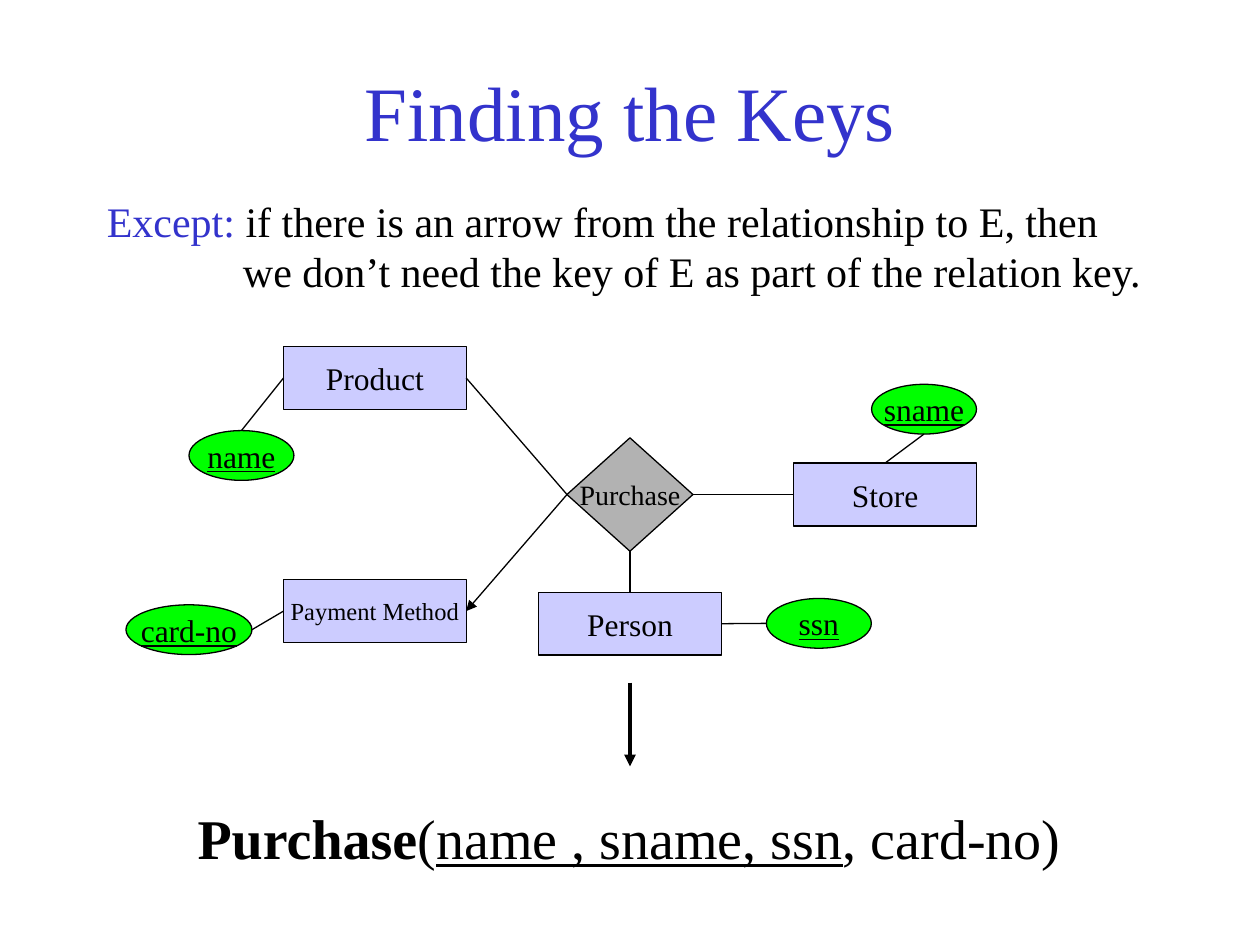
from lxml.etree import SubElement
from pptx import Presentation
from pptx.dml.color import RGBColor
from pptx.enum.shapes import MSO_CONNECTOR, MSO_SHAPE
from pptx.enum.text import MSO_ANCHOR, PP_ALIGN
from pptx.oxml.ns import qn
from pptx.util import Inches, Pt

FONT = "Times New Roman"
BLUE = RGBColor(0x33, 0x33, 0xCC)
BLACK = RGBColor(0, 0, 0)
GRAY = RGBColor(0xB2, 0xB2, 0xB2)
LILAC = RGBColor(0xCC, 0xCC, 0xFF)
GREEN = RGBColor(0, 0xFF, 0)
TOP, LEFT, BOTTOM, RIGHT = range(4)

deck = Presentation()
deck.slide_width, deck.slide_height = Inches(10), Inches(7.5)
COL = deck.slide_width / 40
ROW = deck.slide_height / 30
slide = deck.slides.add_slide(deck.slide_layouts[5])
shapes = slide.shapes


def add_run(para, text, size, color=BLACK, bold=False, under=False):
    run = para.add_run()
    run.text = text
    font = run.font
    font.name, font.size, font.bold, font.underline = FONT, Pt(size), bold, under
    font.color.rgb = color


def add_line(start, end, width=0.75, arrow=False):
    """Draw a line between two (x, y) points in slide units."""
    line = shapes.add_connector(MSO_CONNECTOR.STRAIGHT, *map(int, start + end))
    line.line.color.rgb = BLACK
    line.line.width = Pt(width)
    if arrow:
        SubElement(line.line._get_or_add_ln(), qn("a:tailEnd"), type="triangle")
    SubElement(line._element.spPr, qn("a:effectLst"))
    return line


# Title
title = shapes.title
title.left, title.top = int(3 * COL), int(ROW)
title.width, title.height = int(34 * COL), int(5 * ROW)
title.text_frame.vertical_anchor = MSO_ANCHOR.MIDDLE
para = title.text_frame.paragraphs[0]
para.alignment = PP_ALIGN.CENTER
add_run(para, "Finding the Keys", 44, BLUE)

# Rule
rule = shapes.add_textbox(int(3 * COL), int(6 * ROW), int(33.7 * COL), int(3.6 * ROW))
frame = rule.text_frame
frame.word_wrap = False
para = frame.paragraphs[0]
add_run(para, "Except:", 24, BLUE)
add_run(para, " if there is an arrow from the relationship to E, then", 24)
para = frame.add_paragraph()
para._p.get_or_add_pPr().set("marL", str(Inches(1.08)))
add_run(para, "we don’t need the key of E as part of the relation key.", 24)

# Resulting relation
answer = shapes.add_textbox(int(5.88 * COL), int(25.32 * ROW), int(28.24 * COL), int(2.5 * ROW))
answer.text_frame.word_wrap = False
para = answer.text_frame.paragraphs[0]
add_run(para, "Purchase", 32, bold=True)
add_run(para, "(", 32)
add_run(para, "name , sname, ssn", 32, under=True)
add_run(para, ", card-no)", 32)
add_line((20 * COL, 21.67 * ROW), (20 * COL, 24.33 * ROW), 2.25, True)

# Diagram nodes: text, column, row, columns wide, text size
kinds = [
    (MSO_SHAPE.DIAMOND, GRAY, 3.6, False, [("Purchase", 18, 13.9, 4, 16)]),
    (MSO_SHAPE.RECTANGLE, LILAC, 2, False, [
        ("Product", 9, 11, 5.8, 18),
        ("Person", 17.1, 18.8, 5.8, 18),
        ("Store", 25.2, 14.7, 5.8, 18),
        ("Payment Method", 9, 18.4, 5.8, 14),
    ]),
    (MSO_SHAPE.OVAL, GREEN, 1.58, True, [
        ("name", 6, 13.67, 3.33, 18),
        ("card-no", 4, 19.2, 4, 18),
        ("ssn", 24.33, 19, 3.33, 18),
        ("sname", 27.67, 12.2, 3.33, 18),
    ]),
]
nodes = {}
for kind, fill, high, under, items in kinds:
    for text, col, row, wide, size in items:
        node = shapes.add_shape(kind, int(col * COL), int(row * ROW),
                                int(wide * COL), int(high * ROW))
        node.shadow.inherit = False
        node.fill.solid()
        node.fill.fore_color.rgb = fill
        node.line.color.rgb = BLACK
        node.line.width = Pt(0.75)
        frame = node.text_frame
        frame.word_wrap = False
        frame.vertical_anchor = MSO_ANCHOR.MIDDLE
        para = frame.paragraphs[0]
        para.alignment = PP_ALIGN.CENTER
        add_run(para, text, size, under=under)
        nodes[text] = node

# Links: from node and side, to node and side, arrow
links = [
    ("Product", LEFT, "name", TOP, False),
    ("Payment Method", LEFT, "card-no", RIGHT, False),
    ("Purchase", LEFT, "Product", RIGHT, False),
    ("Purchase", RIGHT, "Store", LEFT, False),
    ("Purchase", BOTTOM, "Person", TOP, False),
    ("Purchase", LEFT, "Payment Method", RIGHT, True),
    ("Store", TOP, "sname", BOTTOM, False),
    ("Person", RIGHT, "ssn", LEFT, False),
]
shares = {TOP: (0.5, 0), LEFT: (0, 0.5), BOTTOM: (0.5, 1), RIGHT: (1, 0.5)}
for first, side, last, far, arrow in links:
    head, tail = nodes[first], nodes[last]
    start, end = [
        (node.left + shares[edge][0] * node.width, node.top + shares[edge][1] * node.height)
        for node, edge in ((head, side), (tail, far))
    ]
    line = add_line(start, end, arrow=arrow)
    line.begin_connect(head, side)
    if tail.auto_shape_type == MSO_SHAPE.RECTANGLE:
        line.end_connect(tail, far)

deck.save("out.pptx")
